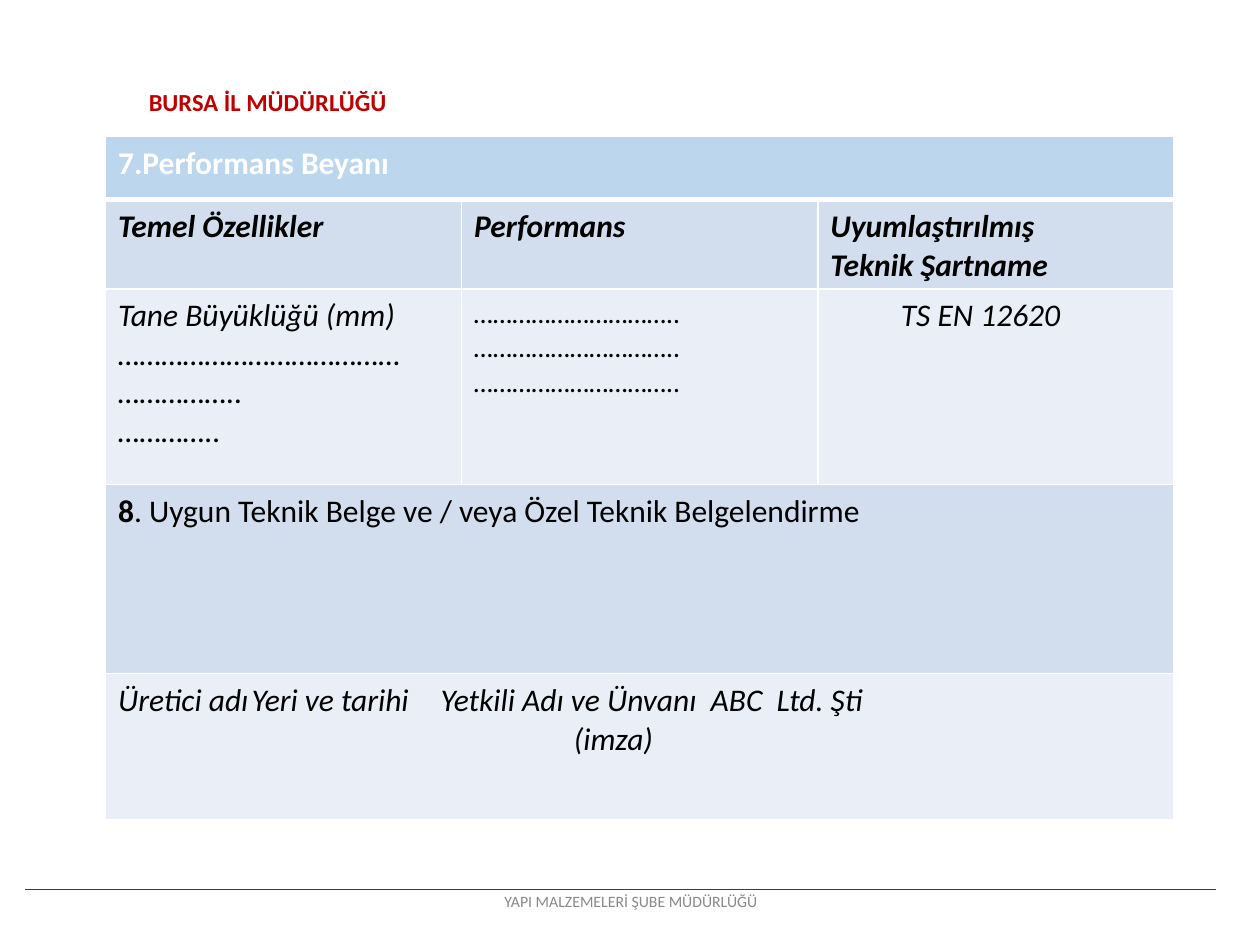
from lxml import etree
from pptx import Presentation
from pptx.dml.color import RGBColor
from pptx.enum import shapes, text
from pptx.oxml.ns import qn
from pptx.util import Pt


def color(value):
    return RGBColor.from_string(value)


def style(para, size, value, bold=False, italic=False):
    font = para.font
    font.name, font.size = "Calibri", Pt(size)
    font.bold, font.italic = bold, italic
    font.color.rgb = color(value)


deck = Presentation()
deck.slide_width, deck.slide_height = Pt(720), Pt(540)
page = deck.slides.add_slide(deck.slide_layouts[5])

# Rule above the footer
rule = page.shapes.add_connector(
    shapes.MSO_CONNECTOR.STRAIGHT, Pt(14.4), Pt(508.3), Pt(694.8), Pt(508.3))
rule.line.color.rgb = color("333E50")
rule.line.width = Pt(0.48)
etree.SubElement(rule._element.spPr, qn("a:effectLst"))

# Title
title = page.shapes.title
title.left, title.top, title.width, title.height = Pt(77.8), Pt(46), Pt(152.6), Pt(24.5)
frame = title.text_frame
frame.text = "BURSA İL MÜDÜRLÜĞÜ"
frame.word_wrap = False
frame.auto_size = text.MSO_AUTO_SIZE.NONE
frame.vertical_anchor = text.MSO_ANCHOR.TOP
para = frame.paragraphs[0]
para.alignment = text.PP_ALIGN.LEFT
para.line_spacing = 1.0
style(para, 14, "C00000", bold=True)

# Table grid
heights = [36, 51, 112, 108, 83.5]
table = page.shapes.add_table(
    5, 3, Pt(60.3), Pt(78), Pt(610.5), Pt(sum(heights))).table
table.first_row = table.horz_banding = False
for column in table.columns:
    column.width = Pt(203.5)
for row, height in zip(table.rows, heights):
    row.height = Pt(height)
for index in (0, 3, 4):
    table.cell(index, 0).merge(table.cell(index, 2))

# Cell fills, margins and white borders
fills = ["BCD6ED", "D2DEEE", "EAEEF7", "D2DEEE", "EAEEF7"]
for index, fill in enumerate(fills):
    for cell in table.rows[index].cells:
        cell.margin_left = cell.margin_right = cell.margin_bottom = 0
        cell.margin_top = Pt(4.7)
        properties = cell._tc.get_or_add_tcPr()
        for side in "LRTB":
            thick = (index, side) in ((0, "B"), (1, "T"))
            border = etree.SubElement(
                properties, qn(f"a:ln{side}"), w=str(Pt(3 if thick else 1)))
            paint = etree.SubElement(border, qn("a:solidFill"))
            etree.SubElement(paint, qn("a:srgbClr"), val="FFFFFF")
        cell.fill.solid()
        cell.fill.fore_color.rgb = color(fill)

# Cell text: row, column, lines, size, colour, bold, italic, left and right indent
dots = "…" * 10 + ".."
contents = [
    (0, 0, ["7.Performans Beyanı"], 18, "FFFFFF", True, False, 7.2, 0),
    (1, 0, ["Temel Özellikler"], 18, "000000", True, True, 7.2, 0),
    (1, 1, ["Performans"], 18, "000000", True, True, 7.2, 0),
    (1, 2, ["Uyumlaştırılmış  Teknik Şartname"], 18, "000000", True, True, 7.2, 45),
    (2, 0, ["Tane Büyüklüğü (mm)", "…" * 11 + "……", "……………..", "………….."],
     18, "000000", False, True, 7.2, 0),
    (2, 1, [dots] * 3, 16, "000000", False, True, 7.2, 0),
    (2, 2, ["TS EN 12620"], 18, "000000", False, True, 47.5, 0),
    (3, 0, ["8", ], 18, "000000", False, False, 7.2, 0),
    (4, 0, ["Üretici adı\tYeri ve tarihi\tYetkili Adı ve Ünvanı  ABC  Ltd. Şti", "(imza)"],
     18, "000000", False, True, 11.5, 0),
]
for row, column, lines, size, value, bold, italic, left, right in contents:
    frame = table.cell(row, column).text_frame
    frame.text = "\n".join(lines)
    for para in frame.paragraphs:
        margins = para._p.get_or_add_pPr()
        margins.set("marL", str(Pt(left)))
        margins.set("marR", str(Pt(right)))
        style(para, size, value, bold, italic)

# Bold number in row 8, hanging signature line and its centred caption
para = table.cell(3, 0).text_frame.paragraphs[0]
para.runs[0].font.bold = True
para.add_run().text = ". Uygun Teknik Belge ve / veya Özel Teknik Belgelendirme"
signature, caption = table.cell(4, 0).text_frame.paragraphs
signature._p.pPr.set("indent", str(Pt(-4.3)))
caption.alignment = text.PP_ALIGN.CENTER
caption._p.pPr.set("marL", "0")
caption._p.pPr.set("marR", str(Pt(30)))

# Dotted blank under the grain size
table.cell(2, 0).text_frame.paragraphs[1].runs[0].text = "…………………………………"

# Footer
footer = page.shapes.add_textbox(Pt(265), Pt(510.5), Pt(190.8), Pt(10))
frame = footer.text_frame
frame.margin_left = frame.margin_right = frame.margin_top = frame.margin_bottom = 0
frame.word_wrap = True
frame.text = "YAPI MALZEMELERİ ŞUBE MÜDÜRLÜĞÜ"
para = frame.paragraphs[0]
para.alignment = text.PP_ALIGN.CENTER
para.line_spacing = Pt(9.6)
style(para, 9, "888888")

deck.save("out.pptx")
